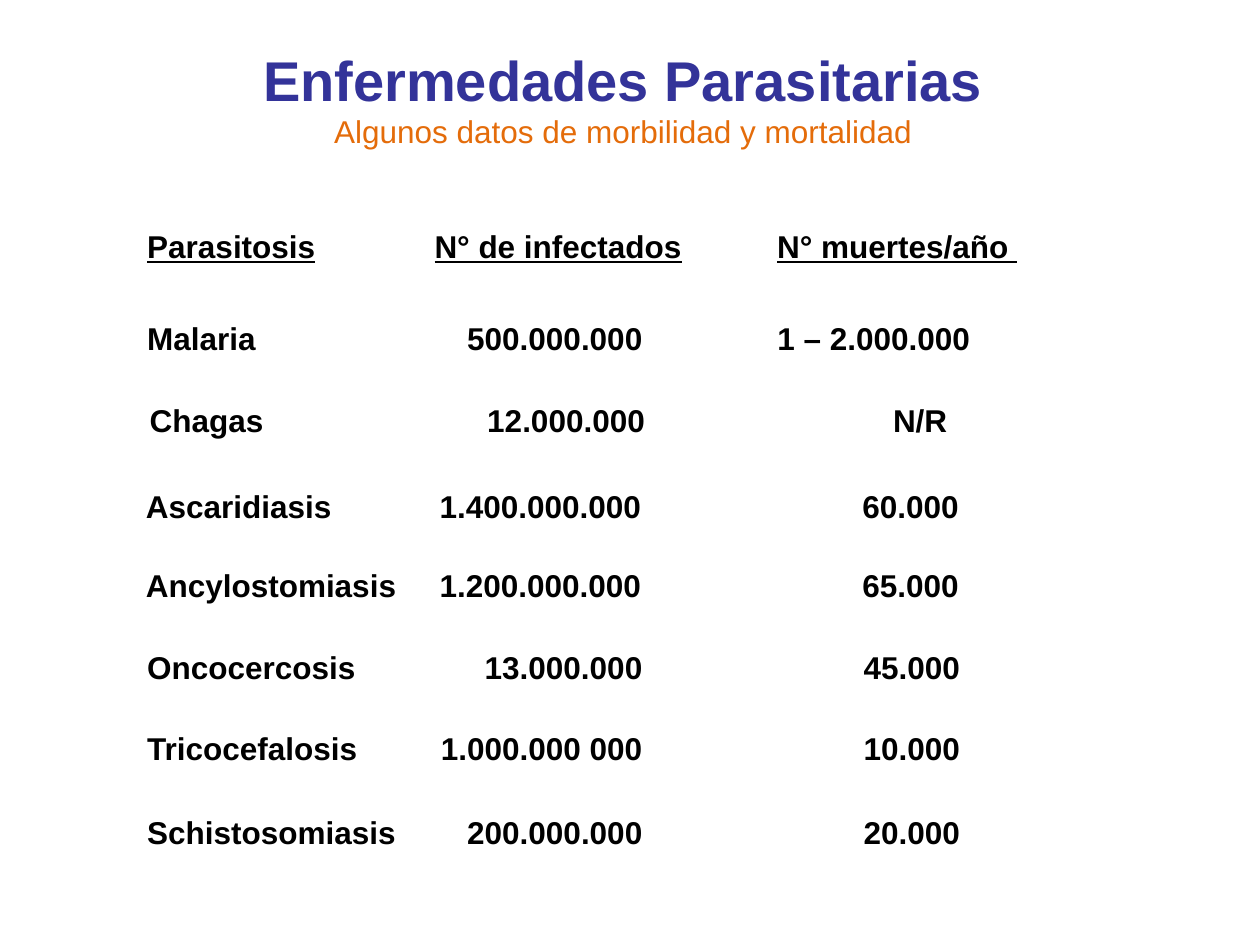
from lxml import etree
from pptx import Presentation, util as u
from pptx.dml import color
from pptx.enum import shapes, text
from pptx.oxml import ns

COLORS = {"white": "FFFFFF", "black": "000000", "title": "333399", "subtitle": "E46C0A"}
COLUMNS, ROWS = 100, 75
HEADINGS = ("Parasitosis", "N° de infectados", "N° muertes/año ")
HEADING_STOPS = (("l", 22.8), ("l", 50))
DISEASES = [
    (10.7, 24.8, ("Malaria", "500.000.000", "1 – 2.000.000"), 65.3),
    (10.9, 31.3, ("Chagas", "12.000.000", "N/R"), 63.3),
    (10.6, 38.2, ("Ascaridiasis", "1.400.000.000", "60.000"), 64.5),
    (10.6, 44.4, ("Ancylostomiasis", "1.200.000.000", "65.000"), 64.5),
    (10.7, 50.9, ("Oncocercosis", "13.000.000", "45.000"), 64.5),
    (10.7, 57.4, ("Tricocefalosis", "1.000.000 000", "10.000"), 64.5),
    (10.7, 64, ("Schistosomiasis", "200.000.000", "20.000"), 64.5),
]


class SlideBuilder:
    def __init__(self, presentation):
        self.slide = presentation.slides.add_slide(presentation.slide_layouts[6])
        self.column = presentation.slide_width / COLUMNS
        self.row = presentation.slide_height / ROWS
        self.format = {"name": "Arial", "size": u.Pt(18), "bold": True}

    def box(self, left, top, width, height):
        return (u.Emu(round(left * self.column)), u.Emu(round(top * self.row)),
                u.Emu(round(width * self.column)), u.Emu(round(height * self.row)))

    def run(self, paragraph, content, ink="black", **changes):
        run = paragraph.add_run()
        run.text = content
        for key, value in {**self.format, **changes}.items():
            setattr(run.font, key, value)
        run.font.color.rgb = color.RGBColor.from_string(COLORS[ink])

    def tab_stops(self, paragraph, stops):
        properties = paragraph._p.get_or_add_pPr()
        tab_list = etree.SubElement(properties, ns.qn("a:tabLst"))
        for alignment, position in stops:
            etree.SubElement(tab_list, ns.qn("a:tab"),
                             pos=str(round(position * self.column)), algn=alignment)

    def line(self, left, top, width, cells, stops, underline=False):
        shape = self.slide.shapes.add_shape(
            shapes.MSO_SHAPE.RECTANGLE, *self.box(left, top, width, 4))
        shape.shadow.inherit = False
        shape.fill.solid()
        shape.fill.fore_color.rgb = color.RGBColor.from_string(COLORS["white"])
        shape.line.fill.background()
        frame = shape.text_frame
        frame.word_wrap = True
        frame.vertical_anchor = text.MSO_ANCHOR.TOP
        paragraph = frame.paragraphs[0]
        paragraph.alignment = text.PP_ALIGN.LEFT
        self.tab_stops(paragraph, stops)
        for index, cell in enumerate(cells):
            if index:
                self.run(paragraph, "\t")
            self.run(paragraph, cell, underline=underline)

    def heading(self, left, top, width, height, title, subtitle):
        frame = self.slide.shapes.add_textbox(*self.box(left, top, width, height)).text_frame
        frame.word_wrap = True
        first, second = frame.paragraphs[0], frame.add_paragraph()
        for paragraph in (first, second):
            paragraph.alignment = text.PP_ALIGN.CENTER
        self.run(first, title, "title", size=u.Pt(32))
        self.run(second, subtitle, "subtitle", bold=False)


def main():
    presentation = Presentation()
    presentation.slide_width, presentation.slide_height = u.Inches(10), u.Inches(7.5)
    builder = SlideBuilder(presentation)
    builder.line(10.7, 17.5, 82.2, HEADINGS, HEADING_STOPS, underline=True)
    for left, top, cells, deaths_edge in DISEASES:
        builder.line(left, top, 77.6, cells, (("r", 39.3), ("r", deaths_edge)))
    builder.heading(14.1, 3.1, 70.7, 9.4, "Enfermedades Parasitarias",
                    "Algunos datos de morbilidad y mortalidad")
    presentation.save("out.pptx")


if __name__ == "__main__":
    main()
